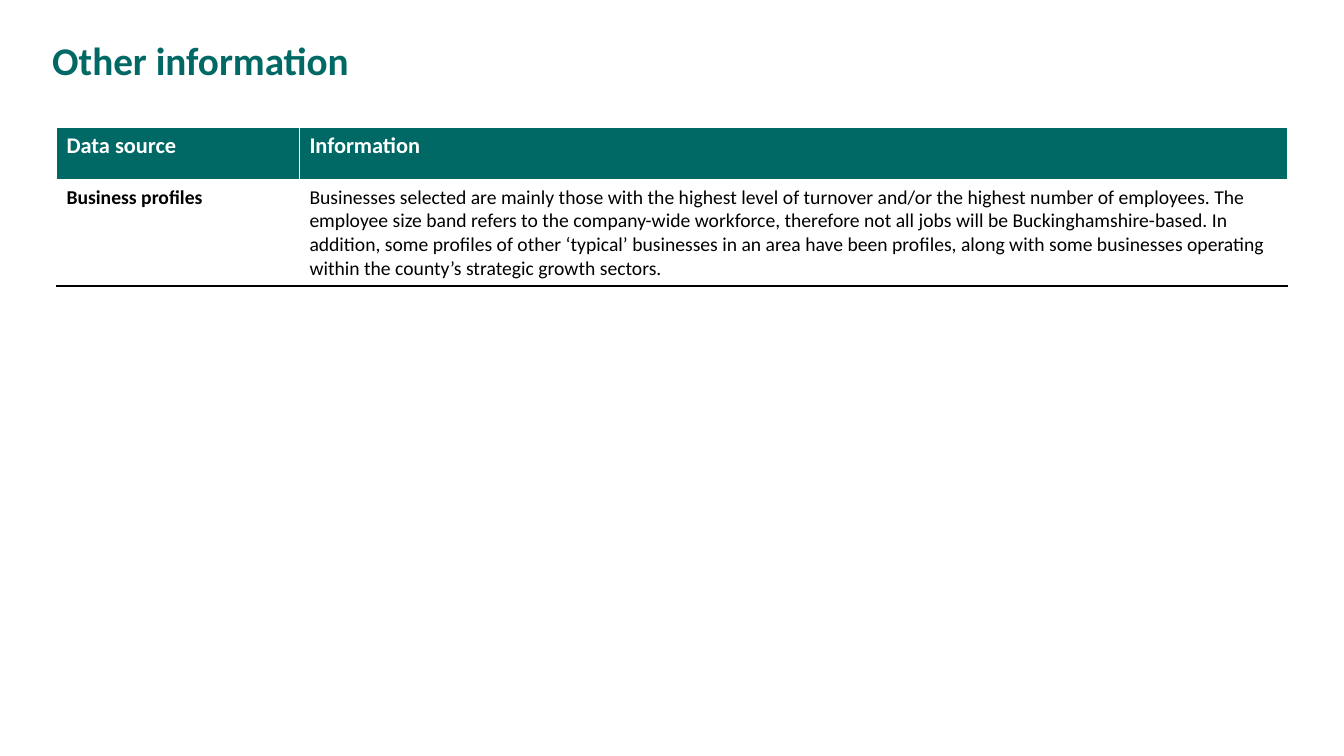
from lxml.etree import SubElement
from pptx import Presentation
from pptx.dml.color import RGBColor
from pptx.enum.text import MSO_ANCHOR, MSO_AUTO_SIZE
from pptx.oxml.ns import qn
from pptx.util import Pt

TEAL = RGBColor(0x00, 0x69, 0x65)
WHITE = RGBColor(0xFF, 0xFF, 0xFF)
BLACK = RGBColor(0x00, 0x00, 0x00)

HEADINGS = ["Data source", "Information"]
PROFILES = [
    "Business profiles",
    "Businesses selected are mainly those with the highest level of turnover and/or "
    "the highest number of employees. The employee size band refers to the company-wide "
    "workforce, therefore not all jobs will be Buckinghamshire-based. In addition, some "
    "profiles of other ‘typical’ businesses in an area have been profiles, along with "
    "some businesses operating within the county’s strategic growth sectors.",
]


def px(length):
    return length * 9144


def write(frame, text, size, color, bold=False, font="Calibri", spacing=None):
    para = frame.paragraphs[0]
    para.line_spacing = spacing
    span = para.add_run()
    span.text = text
    span.font.name = font
    span.font.size = Pt(size)
    span.font.bold = bold
    span.font.color.rgb = color


class InfoSlide:
    def __init__(self, deck):
        self.page = deck.slides.add_slide(deck.slide_layouts[6])
        self.accent = TEAL

    def title(self, text, left, top, width, height):
        box = self.page.shapes.add_textbox(px(left), px(top), px(width), px(height))
        frame = box.text_frame
        frame.word_wrap = True
        frame.auto_size = MSO_AUTO_SIZE.SHAPE_TO_FIT_TEXT
        frame.vertical_anchor = MSO_ANCHOR.MIDDLE
        write(frame, text, 28, self.accent, bold=True, spacing=0.9)

    def borders(self, cell, bottom, bottom_width):
        properties = cell._tc.get_or_add_tcPr()
        edges = [("a:lnL", WHITE, 1), ("a:lnR", WHITE, 1), ("a:lnT", WHITE, 1),
                 ("a:lnB", bottom, bottom_width)]
        for position, (tag, color, width) in enumerate(edges):
            line = SubElement(properties, qn(tag), w=str(Pt(width)))
            fill = SubElement(line, qn("a:solidFill"))
            SubElement(fill, qn("a:srgbClr"), val=str(color))
            properties.insert(position, line)

    def table(self, rows, left, top, widths, heights):
        frame = self.page.shapes.add_table(
            len(rows), len(widths), px(left), px(top), px(sum(widths)), px(sum(heights)))
        grid = frame.table
        grid.horz_banding = False
        grid.first_row = False
        for column, width in zip(grid.columns, widths):
            column.width = px(width)
        for row, height in zip(grid.rows, heights):
            row.height = px(height)
        for row_index, texts in enumerate(rows):
            for column_index, text in enumerate(texts):
                cell = grid.cell(row_index, column_index)
                if row_index == 0:
                    cell.fill.solid()
                    cell.fill.fore_color.rgb = self.accent
                    write(cell.text_frame, text, 16, WHITE, bold=True)
                    self.borders(cell, WHITE, 3)
                else:
                    cell.fill.background()
                    write(cell.text_frame, text, 14, BLACK, bold=column_index == 0)
                    self.borders(cell, BLACK, 1)


def main():
    deck = Presentation()
    deck.slide_width = px(1333)
    deck.slide_height = px(750)
    slide = InfoSlide(deck)
    slide.table([HEADINGS, PROFILES], 56, 126, widths=[241, 980], heights=[53, 103])
    slide.title("Other information", 42, 36, 1150, 53)
    deck.save("out.pptx")


if __name__ == "__main__":
    main()
